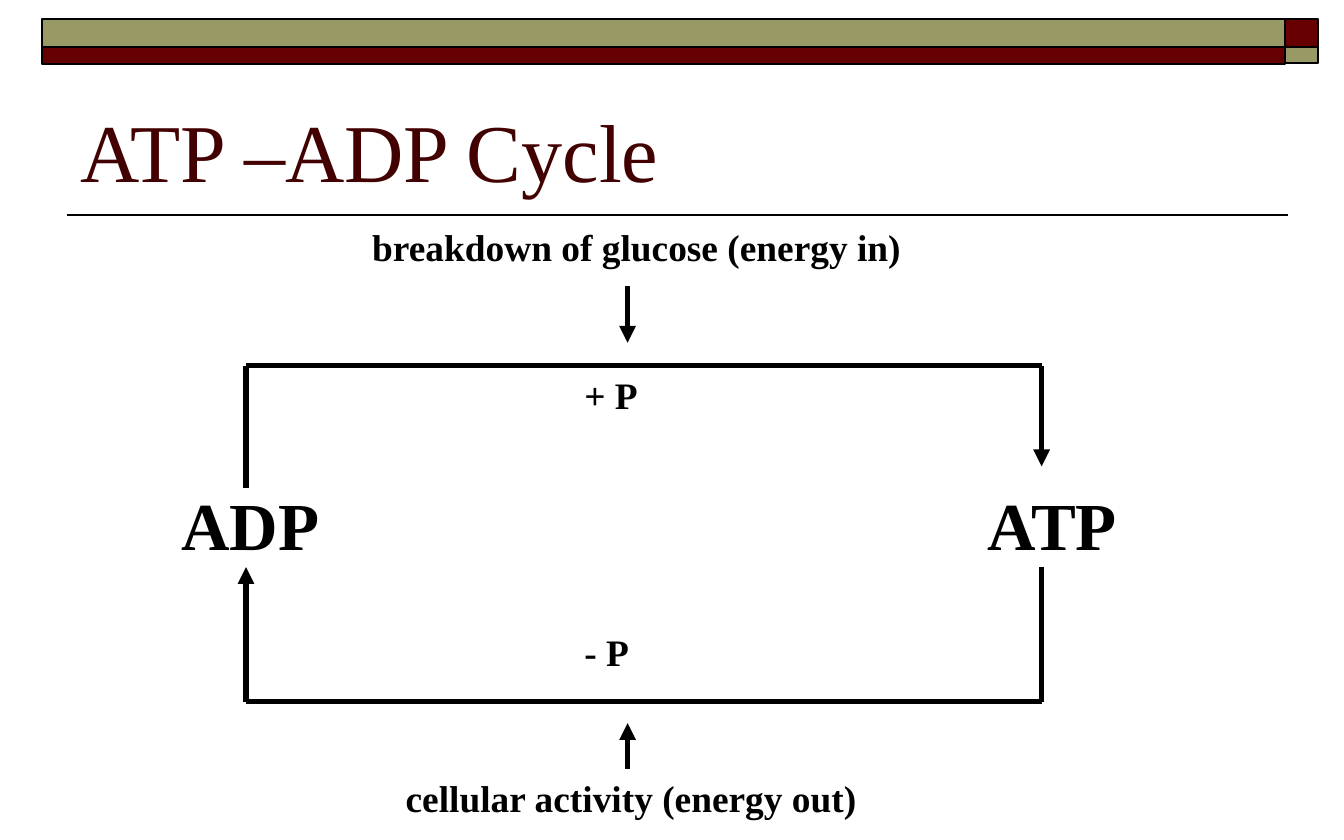
"""Build the ATP–ADP cycle slide."""
import pptx
import pptx.dml.color
import pptx.enum.shapes
import pptx.enum.text
import pptx.oxml
import pptx.oxml.ns
import pptx.util

Inches = pptx.util.Inches
Pt = pptx.util.Pt
COLORS = {"olive": "999966", "maroon": "660000", "title": "420000", "ink": "000000"}
FONT = "Times New Roman"


def rgb(name):
    return pptx.dml.color.RGBColor.from_string(COLORS[name])


def add_line(start, end, width, arrow=False):
    line = slide.shapes.add_connector(
        pptx.enum.shapes.MSO_CONNECTOR.STRAIGHT, *map(Inches, start + end)
    )
    line.line.color.rgb = rgb("ink")
    line.line.width = Pt(width)
    if arrow:
        head = pptx.oxml.parse_xml(
            f'<a:tailEnd {pptx.oxml.ns.nsdecls("a")} type="triangle"/>'
        )
        line.line._get_or_add_ln().append(head)
    effects = pptx.oxml.parse_xml(f'<a:effectLst {pptx.oxml.ns.nsdecls("a")}/>')
    line._element.spPr.append(effects)


deck = pptx.Presentation()
deck.slide_width = Inches(10)
deck.slide_height = Inches(6.25)
slide = deck.slides.add_slide(deck.slide_layouts[5])

add_line((9.58, 1.6), (0.5, 1.6), 1)

bands = [
    (9.56, 0.14, 0.25, 0.21, "maroon"),
    (0.31, 0.14, 9.25, 0.21, "olive"),
    (0.31, 0.35, 9.25, 0.13, "maroon"),
    (9.56, 0.35, 0.25, 0.12, "olive"),
]
for *box, color in bands:
    band = slide.shapes.add_shape(
        pptx.enum.shapes.MSO_SHAPE.RECTANGLE, *map(Inches, box)
    )
    band.shadow.inherit = False
    band.fill.solid()
    band.fill.fore_color.rgb = rgb(color)
    band.line.color.rgb = rgb("ink")
    band.line.width = Pt(1)

title = slide.shapes.title
title.left, title.top, title.width, title.height = map(Inches, (0.5, 0.49, 9, 1.04))
title.text_frame.text = "ATP –ADP Cycle"
title.text_frame.auto_size = pptx.enum.text.MSO_AUTO_SIZE.NONE
title.text_frame.vertical_anchor = pptx.enum.text.MSO_ANCHOR.BOTTOM
heading = title.text_frame.paragraphs[0]
heading.alignment = pptx.enum.text.PP_ALIGN.LEFT
heading.font.name = FONT
heading.font.size = Pt(44)
heading.font.color.rgb = rgb("title")

adp_x, atp_x, energy_x = 1.83, 7.75, 4.67
top_y, bottom_y = 2.72, 5.22
cycle = [
    ((adp_x, 3.63), (adp_x, top_y), False),
    ((adp_x, top_y), (atp_x, top_y), False),
    ((atp_x, top_y), (atp_x, 3.47), True),
    ((atp_x, 4.22), (atp_x, bottom_y), False),
    ((atp_x, bottom_y), (adp_x, bottom_y), False),
    ((adp_x, bottom_y), (adp_x, 4.22), True),
    ((energy_x, 2.13), (energy_x, 2.55), True),
    ((energy_x, 5.72), (energy_x, 5.38), True),
]
for start, end, arrow in cycle:
    add_line(start, end, 3, arrow)

labels = [
    ("ADP", 1.25, 3.55, 1.75, 0.71, 36),
    ("ATP", 7.25, 3.55, 1.5, 0.71, 36),
    ("breakdown of glucose (energy in)", 2.67, 1.62, 4.67, 0.44, 20),
    ("+ P", 4.25, 2.72, 1, 0.44, 20),
    ("- P", 4.25, 4.63, 0.92, 0.44, 20),
    ("cellular activity (energy out)", 2.92, 5.72, 5.58, 0.44, 20),
]
for wording, *box, size in labels:
    label = slide.shapes.add_textbox(*map(Inches, box)).text_frame
    label.word_wrap = True
    label.auto_size = pptx.enum.text.MSO_AUTO_SIZE.SHAPE_TO_FIT_TEXT
    label.text = wording
    font = label.paragraphs[0].font
    font.name = FONT
    font.size = Pt(size)
    font.bold = True
    font.color.rgb = rgb("ink")

deck.save("out.pptx")
